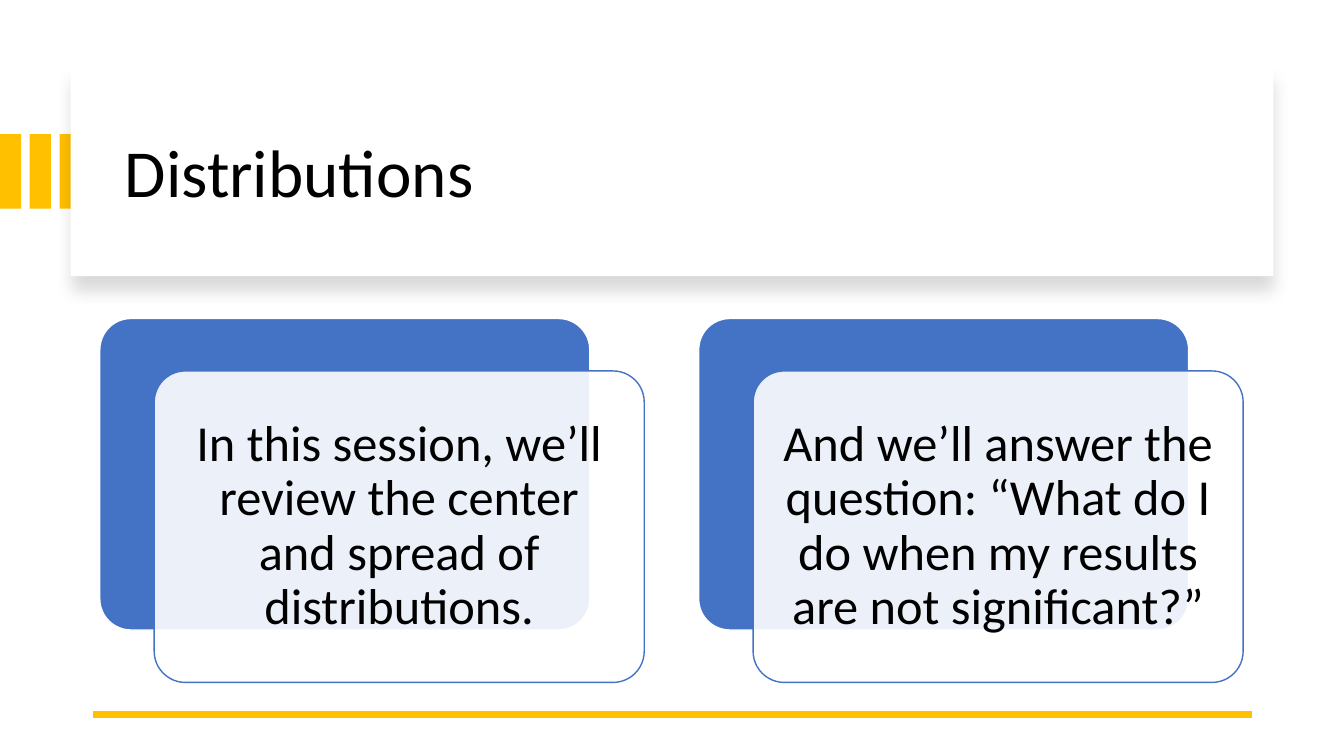
from lxml import etree
from pptx import Presentation
from pptx.dml.color import RGBColor
from pptx.enum.shapes import MSO_CONNECTOR, MSO_SHAPE
from pptx.enum.text import MSO_ANCHOR, PP_ALIGN
from pptx.oxml.ns import qn
from pptx.util import Inches, Pt

TITLE = "Distributions"
CARDS = [
    "In this session, we’ll review the center and spread of distributions.",
    "And we’ll answer the question: “What do I do when my results are not significant?”",
]
FONT = "Calibri"
WHITE, BLACK, GOLD, BLUE = "FFFFFF", "000000", "FFC000", "4472C4"

SLIDE_W, SLIDE_H = 13.33, 7.5
BAR_COUNT, BAR_TOP, BAR_W, BAR_H, BAR_STEP = 3, 1.33, 0.21, 0.74, 0.295
BANNER = (0.7, 0.67, 11.93, 2.07)
TITLE_BOX = (1.14, 0.89, 11.13, 1.7)
RULE_LEFT, RULE_RIGHT, RULE_Y = 0.92, 12.42, 7.09
CARD_LEFT, CARD_TOP, CARD_W, CARD_H, CARD_STEP = 0.99, 3.16, 4.86, 3.09, 5.94
FRONT_DX, FRONT_DY = 0.54, 0.52


def rgb(hex_color):
    return RGBColor.from_string(hex_color)


def add_box(slide, kind, box, fill, line=None):
    s = slide.shapes.add_shape(kind, *map(Inches, box))
    s.shadow.inherit = False
    s.fill.solid()
    s.fill.fore_color.rgb = rgb(fill)
    if line:
        s.line.color.rgb = rgb(line)
        s.line.width = Pt(1)
    else:
        s.line.fill.background()
    return s


def set_alpha(parent, percent):
    color = parent.find(".//" + qn("a:srgbClr"))
    etree.SubElement(color, qn("a:alpha"), val=str(percent * 1000))


def add_drop_shadow(s):
    effects = s._element.spPr.find(qn("a:effectLst"))
    shadow = etree.SubElement(effects, qn("a:outerShdw"), blurRad=str(Pt(11)),
                              dist=str(Pt(10)), dir=str(90 * 60000),
                              algn="t", rotWithShape="0")
    etree.SubElement(shadow, qn("a:srgbClr"), val=BLACK)
    set_alpha(shadow, 15)


def write(s, text, size, align):
    tf = s.text_frame
    tf.word_wrap = True
    tf.vertical_anchor = MSO_ANCHOR.MIDDLE
    p = tf.paragraphs[0]
    p.alignment = align
    p.line_spacing = 0.9
    r = p.add_run()
    r.text = text
    r.font.name = FONT
    r.font.size = Pt(size)
    r.font.color.rgb = rgb(BLACK)
    return tf


def add_header(slide):
    for i in range(BAR_COUNT):
        add_box(slide, MSO_SHAPE.RECTANGLE, (i * BAR_STEP, BAR_TOP, BAR_W, BAR_H), GOLD)
    add_drop_shadow(add_box(slide, MSO_SHAPE.RECTANGLE, BANNER, WHITE))
    title = slide.shapes.add_textbox(*map(Inches, TITLE_BOX))
    write(title, TITLE, 48, PP_ALIGN.LEFT)


def add_rule(slide):
    rule = slide.shapes.add_connector(
        MSO_CONNECTOR.STRAIGHT,
        *map(Inches, (RULE_RIGHT, RULE_Y, RULE_LEFT, RULE_Y)))
    rule.line.color.rgb = rgb(GOLD)
    rule.line.width = Pt(4.5)
    etree.SubElement(rule._element.spPr, qn("a:effectLst"))


def add_card(slide, left, text):
    """Add a blue panel with a translucent white panel, holding the text, offset over it."""
    back = add_box(slide, MSO_SHAPE.ROUNDED_RECTANGLE,
                   (left, CARD_TOP, CARD_W, CARD_H), BLUE, WHITE)
    front = add_box(slide, MSO_SHAPE.ROUNDED_RECTANGLE,
                    (left + FRONT_DX, CARD_TOP + FRONT_DY, CARD_W, CARD_H), WHITE, BLUE)
    for s in (back, front):
        s.adjustments[0] = 0.1
    set_alpha(front._element.spPr.find(qn("a:solidFill")), 90)
    tf = write(front, text, 36, PP_ALIGN.CENTER)
    tf.margin_left = tf.margin_right = tf.margin_top = tf.margin_bottom = Inches(0.15)


def main():
    prs = Presentation()
    prs.slide_width, prs.slide_height = Inches(SLIDE_W), Inches(SLIDE_H)
    slide = prs.slides.add_slide(prs.slide_layouts[6])
    add_header(slide)
    add_rule(slide)
    for i, text in enumerate(CARDS):
        add_card(slide, CARD_LEFT + i * CARD_STEP, text)
    prs.save("out.pptx")


if __name__ == "__main__":
    main()
